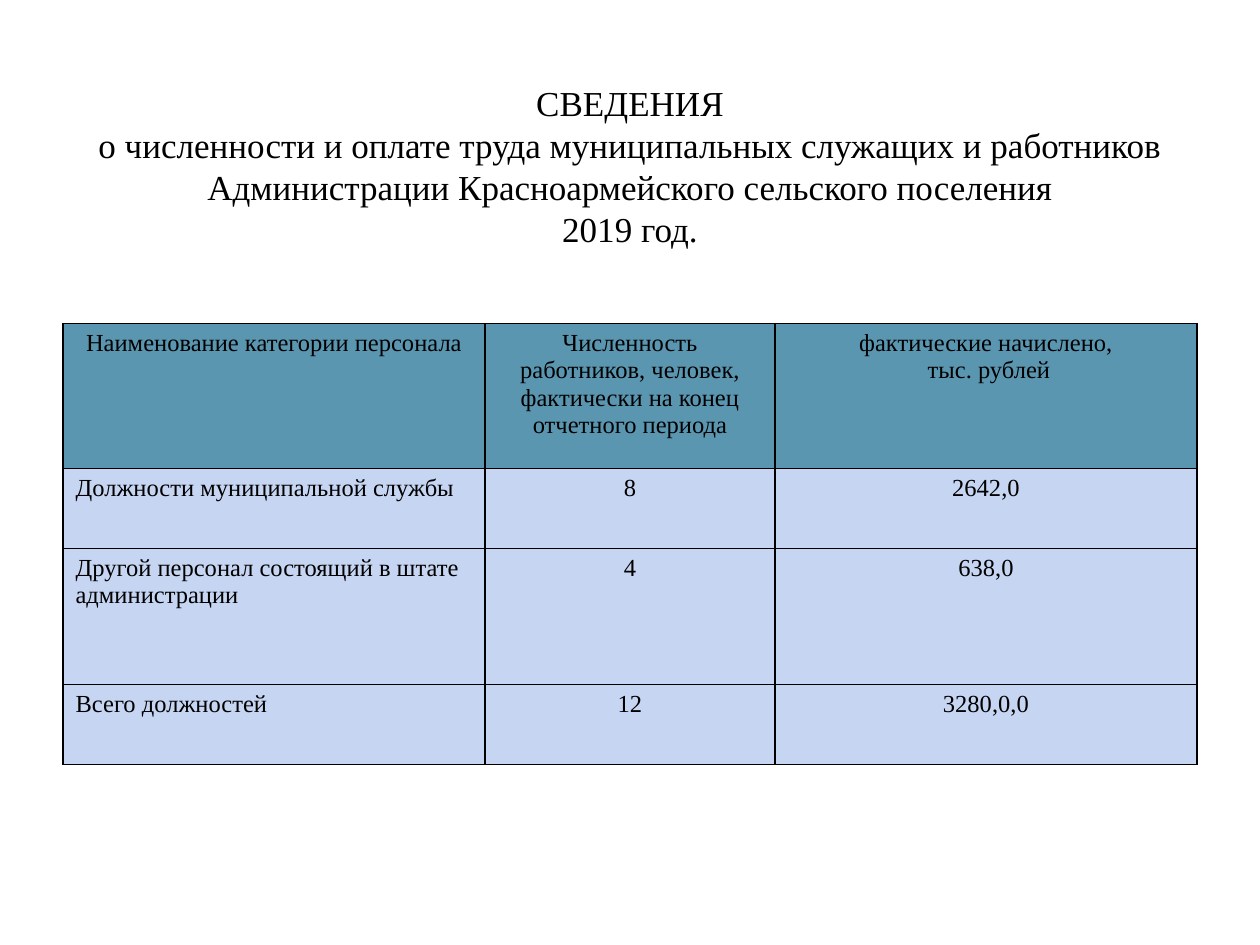
from lxml.etree import SubElement
from pptx import Presentation
from pptx.dml.color import RGBColor
from pptx.enum.text import MSO_ANCHOR as Anchor, PP_ALIGN as Align
from pptx.oxml.ns import qn
from pptx.util import Pt

BLACK = RGBColor(0, 0, 0)
TEAL = RGBColor(0x5B, 0x96, 0xB1)
PALE = RGBColor(0xC6, 0xD5, 0xF2)
FONT = "Times New Roman"

TITLE = (
    "СВЕДЕНИЯ\vо численности и оплате труда муниципальных служащих и работников "
    "Администрации Красноармейского сельского поселения\v2019 год."
)
ROWS = [
    (
        "Наименование категории персонала",
        "Численность работников, человек,\nфактически на конец отчетного периода",
        "фактические начислено,\n тыс. рублей",
    ),
    ("Должности муниципальной службы", "8", "2642,0"),
    ("Другой персонал состоящий в штате администрации", "4", "638,0"),
    ("Всего должностей", "12", "3280,0,0"),
]
WIDTHS = [241.2, 165.6, 241.2]
HEIGHTS = [82.8, 45.7, 77.8, 45.7]


def write(frame, text, size=14, align=Align.CENTER, color=BLACK):
    frame.text = text
    for para in frame.paragraphs:
        para.alignment = align
        for run in para.runs:
            run.font.name = FONT
            run.font.size = Pt(size)
            run.font.color.rgb = color


def border(cell, width=1, color=BLACK):
    props = cell._tc.get_or_add_tcPr()
    for side in ("a:lnL", "a:lnR", "a:lnT", "a:lnB"):
        line = SubElement(props, qn(side), w=str(Pt(width)))
        fill = SubElement(line, qn("a:solidFill"))
        SubElement(fill, qn("a:srgbClr"), val=str(color))


def add_title(slide):
    title = slide.shapes.title
    title.left, title.top = Pt(36), Pt(21.6)
    title.width, title.height = Pt(648), Pt(146.2)
    frame = title.text_frame
    frame.word_wrap = True
    frame.vertical_anchor = Anchor.MIDDLE
    write(frame, TITLE, size=20)


def add_grid(slide):
    table = slide.shapes.add_table(
        len(ROWS), len(WIDTHS), Pt(36), Pt(185), Pt(sum(WIDTHS)), Pt(sum(HEIGHTS))
    ).table
    table.horz_banding = False
    table.first_row = False
    for col, width in zip(table.columns, WIDTHS):
        col.width = Pt(width)
    for r, (row, height) in enumerate(zip(ROWS, HEIGHTS)):
        table.rows[r].height = Pt(height)
        for c, text in enumerate(row):
            cell = table.cell(r, c)
            border(cell)
            cell.fill.solid()
            cell.fill.fore_color.rgb = PALE if r else TEAL
            write(cell.text_frame, text, align=Align.LEFT if r and not c else Align.CENTER)


def main():
    deck = Presentation()
    deck.slide_width, deck.slide_height = Pt(720), Pt(540)
    slide = deck.slides.add_slide(deck.slide_layouts[5])
    add_title(slide)
    add_grid(slide)
    deck.save("out.pptx")


if __name__ == "__main__":
    main()
